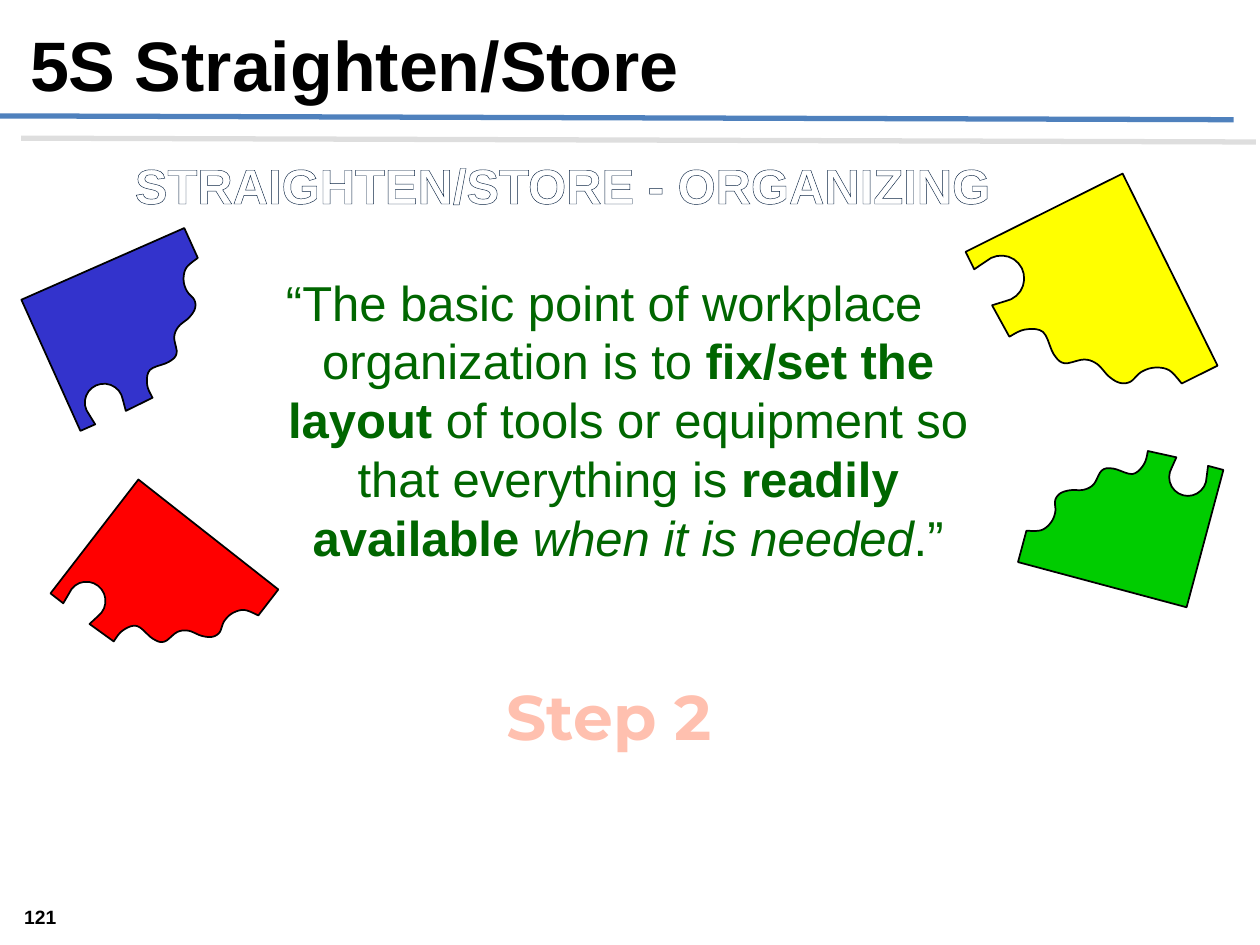
from dataclasses import dataclass
from math import cos, radians, sin

from lxml import etree
from pptx import Presentation, util as u
from pptx.dml.color import RGBColor
from pptx.enum import shapes, text
from pptx.oxml import parse_xml
from pptx.oxml.ns import nsdecls, qn

CELL = u.Inches(0.1)
COLS, ROWS = 100, 75

LONG, SHORT = 14, 11.4
HOLE, BEND = (2.6, 10.1), 1.5
LIPS = (1.27, 3.9)
WAVES = ((6.24, 11.3), (6.27, 10.2), (6.95, 9.2), (8.55, 9.22), (9.4, 8.85),
         (9.75, 7.6), (10.4, 6.97), (11.45, 6.65), (12.15, 6.2), (12.4, 5.55),
         (12.15, 4.65), (12.27, 3.75), (12.86, 2.95), (14, 2.6))


@dataclass(frozen=True)
class Theme:
    """Colours, font names and type sizes."""
    black: str = "000000"
    white: str = "FFFFFF"
    navy: str = "0B2443"
    rule: str = "4F81BD"
    shade: str = "808080"
    quote: str = "006600"
    step: str = "FFC0AF"
    blue: str = "3333CC"
    red: str = "FF0000"
    yellow: str = "FFFF00"
    green: str = "00CC00"
    sans: str = "Arial"
    round: str = "Montserrat"
    head: int = 40
    large: int = 36
    body: int = 28
    small: int = 11


@dataclass(frozen=True)
class Box:
    """A frame in grid columns and rows."""
    col: float
    row: float
    cols: float
    rows: float


@dataclass(frozen=True)
class Run:
    """A stretch of text with its emphasis."""
    text: str
    bold: bool = False
    slant: bool = False


@dataclass(frozen=True)
class Piece:
    """A jigsaw piece: tilt inside its frame, frame, turn of the frame, colour."""
    tilt: float
    box: Box
    turn: float
    fill: str


T = Theme()
UP, DOWN = -24, 195

PIECES = (
    Piece(DOWN, Box(80.8, 35.8, 16.3, 12.4), 0, T.green),
    Piece(UP, Box(1.7, 18.1, 14, 16.1), 0, T.blue),
    Piece(DOWN, Box(77.6, 16, 20, 15.3), 228.6, T.yellow),
    Piece(UP, Box(5.2, 37.3, 14, 16.1), 61.9, T.red),
)

QUOTE = (
    Run("“The basic point of workplace organization is to "),
    Run("fix/set the layout ", bold=True),
    Run("of tools or equipment so that everything is "),
    Run("readily available ", bold=True),
    Run("when it is needed", slant=True),
    Run(".”"),
)


def span(n: float) -> int:
    """Turn grid cells into a length."""
    return round(n * CELL)


def notch() -> list:
    """Trace the round hole in the short end, from lip to lip."""
    (x, y), (near, far) = HOLE, LIPS
    arc = [(x + BEND * cos(radians(a)), y + BEND * sin(radians(a)))
           for a in range(165, 376, 15)]
    return [(near, SHORT), *arc, (far, SHORT)]


def curve(knots, steps: int = 5) -> list:
    """Run a Catmull-Rom spline through the knots."""
    ends = (knots[0], *knots, knots[-1])
    dots = []
    for a, b, c, d in zip(ends, ends[1:], ends[2:], ends[3:]):
        for n in range(steps):
            t = n / steps
            dots.append(tuple(
                q + t / 2 * (r - p + t * (2 * p - 5 * q + 4 * r - s
                                          + t * (3 * (q - r) + s - p)))
                for p, q, r, s in zip(a, b, c, d)))
    return [*dots, knots[-1]]


def tilted(dots, angle: float) -> list:
    """Rotate grid points and give them as lengths."""
    c, s = cos(radians(angle)), sin(radians(angle))
    return [(span(c * x - s * y), span(s * x + c * y)) for x, y in dots]


def place(shape, box: Box) -> None:
    """Move a shape to its frame."""
    shape.left, shape.top = span(box.col), span(box.row)
    shape.width, shape.height = span(box.cols), span(box.rows)


def write(shape, runs, *, size: int, color: str, font: str = T.sans,
          align=text.PP_ALIGN.CENTER, anchor=text.MSO_ANCHOR.TOP,
          wrap: bool = True, inset=None, hang: float = 0, edge: str = "") -> None:
    """Fill a shape with formatted runs."""
    frame = shape.text_frame
    frame.word_wrap, frame.vertical_anchor = wrap, anchor
    if inset is not None:
        frame.margin_left = frame.margin_right = inset
        frame.margin_top = frame.margin_bottom = inset
    para = frame.paragraphs[0]
    para.alignment = align
    if hang:
        props = para._p.get_or_add_pPr()
        props.set("marL", str(span(hang)))
        props.set("indent", str(-span(hang)))
    for part in runs:
        run = para.add_run()
        run.text = part.text
        run.font.name, run.font.size = font, u.Pt(size)
        run.font.bold, run.font.italic = part.bold, part.slant
        run.font.color.rgb = RGBColor.from_string(color)
        if edge:
            run._r.get_or_add_rPr().insert(0, parse_xml(
                f'<a:ln {nsdecls("a")} w="508"><a:solidFill>'
                f'<a:srgbClr val="{edge}"/></a:solidFill></a:ln>'))


def label(slide, box: Box, runs, **form) -> None:
    """Add a text box."""
    shape = slide.shapes.add_textbox(0, 0, 0, 0)
    place(shape, box)
    write(shape, runs, **form)


def rule(slide) -> None:
    """Draw the header rule with its offset shadow."""
    line = slide.shapes.add_connector(
        shapes.MSO_CONNECTOR.STRAIGHT, span(-0.1), span(9.2), span(97.9), span(9.5))
    line.line.color.rgb = RGBColor.from_string(T.rule)
    line.line.width = u.Pt(3)
    fx = etree.SubElement(line._element.spPr, qn("a:effectLst"))
    cast = etree.SubElement(fx, qn("a:outerShdw"), blurRad="0", dist=str(u.Pt(18)),
                            dir="2700000", algn="ctr", rotWithShape="0")
    tint = etree.SubElement(cast, qn("a:srgbClr"), val=T.shade)
    etree.SubElement(tint, qn("a:alpha"), val="25000")


def puzzle(slide, piece: Piece) -> None:
    """Draw one jigsaw piece."""
    edge = [(0, 0), (0, SHORT), *notch(), *curve(WAVES), (LONG, 0)]
    start, *rest = tilted(edge, piece.tilt)
    pen = slide.shapes.build_freeform(*start)
    pen.add_line_segments(rest, close=True)
    shape = pen.convert_to_shape()
    place(shape, piece.box)
    shape.rotation = piece.turn
    shape.shadow.inherit = False
    shape.fill.solid()
    shape.fill.fore_color.rgb = RGBColor.from_string(piece.fill)
    shape.line.color.rgb = RGBColor.from_string(T.black)
    shape.line.width = u.Pt(1)


def main() -> None:
    """Build and save the slide."""
    deck = Presentation()
    deck.slide_width, deck.slide_height = span(COLS), span(ROWS)
    slide = deck.slides.add_slide(deck.slide_layouts[5])
    title = slide.shapes.title
    place(title, Box(1, 11.8, 87.3, 11.5))
    write(title, [Run("STRAIGHTEN/STORE - ORGANIZING", bold=True)],
          size=T.body, color=T.white, edge=T.navy)
    rule(slide)
    for piece in PIECES:
        puzzle(slide, piece)
    label(slide, Box(16.7, 21.1, 62.5, 24.8), QUOTE,
          size=T.body, color=T.quote, hang=3.8)
    label(slide, Box(9.2, 53.3, 78.3, 21.7), [Run("Step 2", bold=True)],
          size=T.large, color=T.step, font=T.round, wrap=False)
    label(slide, Box(1.4, 1.2, 81.8, 7.7), [Run("5S Straighten/Store", bold=True)],
          size=T.head, color=T.black, align=text.PP_ALIGN.LEFT)
    label(slide, Box(0, 71.2, 6.4, 2.5), [Run("121", bold=True)],
          size=T.small, color=T.black, anchor=text.MSO_ANCHOR.BOTTOM, inset=0)
    deck.save("out.pptx")


if __name__ == "__main__":
    main()
